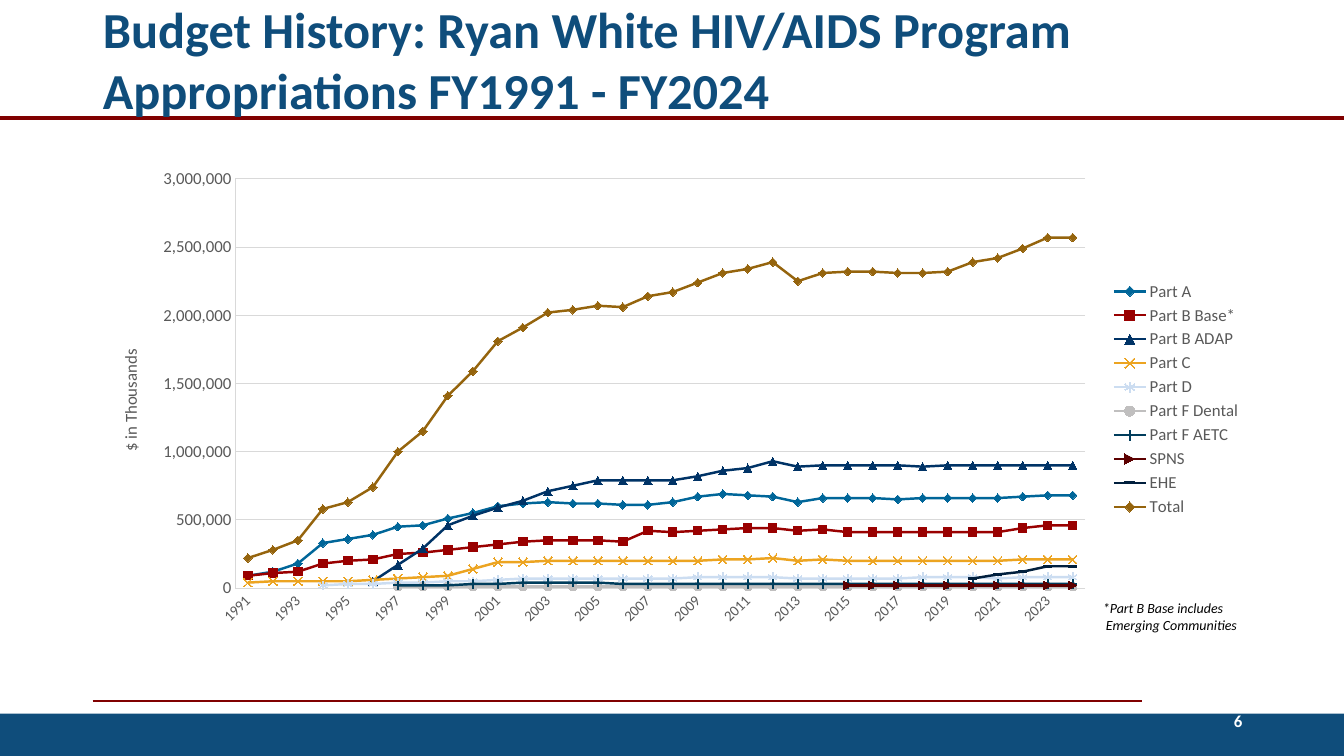
from lxml.etree import SubElement
from pptx import Presentation
from pptx.chart.data import CategoryChartData
from pptx.dml.color import RGBColor
from pptx.enum.chart import XL_CHART_TYPE, XL_LEGEND_POSITION, XL_MARKER_STYLE, XL_TICK_MARK
from pptx.enum.shapes import MSO_CONNECTOR, MSO_SHAPE
from pptx.enum.text import MSO_ANCHOR, MSO_AUTO_SIZE, PP_ALIGN
from pptx.oxml import parse_xml
from pptx.oxml.ns import nsdecls, qn
from pptx.util import Inches, Pt

# Content
TITLE = "Budget History: Ryan White HIV/AIDS Program Appropriations FY1991 - FY2024"
NOTE = ["*Part B Base includes", "Emerging Communities"]
AXIS_TITLE = "$ in Thousands"
PAGE_NUMBER = "6"
FONT = "Calibri"
COLORS = {
    "navy": "0F4D7B", "maroon": "800000", "white": "FFFFFF", "black": "000000",
    "gray": "595959", "grid": "D9D9D9",
    "Part A": "006699", "Part B Base*": "990000", "Part B ADAP": "003366",
    "Part C": "ECA421", "Part D": "CCDDF1", "Part F Dental": "C0BFBF",
    "Part F AETC": "003D5C", "SPNS": "5C0000", "EHE": "001F3D", "Total": "95640D",
}
YEARS = range(1991, 2025)
UNIT = 10_000_000  # appropriations below are in tens of millions of dollars
# Name, marker, filled marker, appropriations up to the last year
APPROPRIATIONS = [
    ("Part A", XL_MARKER_STYLE.DIAMOND, True,
     [9, 12, 18, 33, 36, 39, 45, 46, 51, 55, 60, 62, 63, 62, 62, 61, 61, 63,
      67, 69, 68, 67, 63, 66, 66, 66, 65, 66, 66, 66, 66, 67, 68, 68]),
    ("Part B Base*", XL_MARKER_STYLE.SQUARE, True,
     [9, 11, 12, 18, 20, 21, 25, 26, 28, 30, 32, 34, 35, 35, 35, 34, 42, 41,
      42, 43, 44, 44, 42, 43, 41, 41, 41, 41, 41, 41, 41, 44, 46, 46]),
    ("Part B ADAP", XL_MARKER_STYLE.TRIANGLE, True,
     [5, 17, 29, 46, 53, 59, 64, 71, 75, 79, 79, 79, 79, 82, 86, 88, 93, 89,
      90, 90, 90, 90, 89, 90, 90, 90, 90, 90, 90]),
    ("Part C", XL_MARKER_STYLE.X, False,
     [4, 5, 5, 5, 5, 6, 7, 8, 9, 14, 19, 19, 20, 20, 20, 20, 20, 20,
      20, 21, 21, 22, 20, 21, 20, 20, 20, 20, 20, 20, 20, 21, 21, 21]),
    ("Part D", XL_MARKER_STYLE.STAR, False,
     [2, 3, 3, 4, 4, 5, 5, 6, 7, 7, 7, 7, 7, 7, 7, 8, 8, 8, 8, 7,
      7, 7, 7, 7, 8, 8, 8, 7, 8, 8, 8]),
    ("Part F Dental", XL_MARKER_STYLE.CIRCLE, True, [1] * 28),
    ("Part F AETC", XL_MARKER_STYLE.PLUS, False,
     [2, 2, 2, 3, 3, 4, 4, 4, 4] + [3] * 19),
    ("SPNS", XL_MARKER_STYLE.DOT, True, [2] * 10),
    ("EHE", XL_MARKER_STYLE.DASH, True, [7, 10, 12, 16, 16]),
    ("Total", XL_MARKER_STYLE.DIAMOND, True,
     [22, 28, 35, 58, 63, 74, 100, 115, 141, 159, 181, 191, 202, 204, 207, 206,
      214, 217, 224, 231, 234, 239, 225, 231, 232, 232, 231, 231, 232, 239,
      242, 249, 257, 257]),
]


def rgb(name):
    return RGBColor.from_string(COLORS[name])


def box(*lengths):
    return [Inches(length) for length in lengths]


def style_font(font, size, color, bold=False, italic=False):
    font.name, font.size = FONT, Pt(size)
    font.bold, font.italic = bold, italic
    font.color.rgb = rgb(color)


def style_line(line, color, width):
    line.color.rgb = rgb(color)
    line.width = Pt(width)


def add_rule(slide, left, right, top, width):
    rule = slide.shapes.add_connector(MSO_CONNECTOR.STRAIGHT, *box(left, top, right, top))
    style_line(rule.line, "maroon", width)
    SubElement(rule._element.spPr, qn("a:effectLst"))


def manual_layout(**places):
    """Layout element that places a chart part by fractions of the chart."""
    inner = '<c:layoutTarget val="inner"/>' if "w" in places else ""
    modes = "".join(f'<c:{key}Mode val="edge"/>' for key in "xy")
    sizes = "".join(f'<c:{key} val="{value}"/>' for key, value in places.items())
    return parse_xml(f'<c:layout {nsdecls("c")}><c:manualLayout>{inner}{modes}{sizes}'
                     "</c:manualLayout></c:layout>")


def add_budget_chart(slide):
    data = CategoryChartData(number_format="#,##0")
    data.categories = [str(year) for year in YEARS]
    for name, _, _, amounts in APPROPRIATIONS:
        missing = [None] * (len(YEARS) - len(amounts))
        data.add_series(name, missing + [amount * UNIT for amount in amounts])
    chart = slide.shapes.add_chart(
        XL_CHART_TYPE.LINE_MARKERS, *box(0.92, 1.58, 11.5, 4.76), data).chart
    style_font(chart.font, 10, "black")
    chart.has_title = False
    chart.has_legend = True
    chart.legend.position = XL_LEGEND_POSITION.RIGHT
    chart.legend.include_in_layout = False
    style_font(chart.legend.font, 12, "gray")

    # Series
    plot = chart.plots[0]
    plot.vary_by_categories = False
    for series, (name, marker, filled, _) in zip(plot.series, APPROPRIATIONS):
        series.smooth = False
        style_line(series.format.line, name, 1.75)
        series.marker.style, series.marker.size = marker, 6
        style_line(series.marker.format.line, name, 0.75)
        fill = series.marker.format.fill
        if filled:
            fill.solid()
            fill.fore_color.rgb = rgb(name)
        else:
            fill.background()

    # Axes
    years, dollars = chart.category_axis, chart.value_axis
    for axis, size in ((years, 10.6), (dollars, 12)):
        axis.major_tick_mark = axis.minor_tick_mark = XL_TICK_MARK.NONE
        style_line(axis.format.line, "grid", 0.75)
        style_font(axis.tick_labels.font, size, "gray")
    years._element.find(qn("c:txPr")).find(qn("a:bodyPr")).set("rot", "-2700000")
    dollars.minimum_scale, dollars.maximum_scale = 0, 300 * UNIT
    dollars.major_unit = 50 * UNIT
    style_line(dollars.major_gridlines.format.line, "grid", 0.75)
    dollars.tick_labels.number_format = "#,##0,"
    dollars.tick_labels.number_format_is_linked = False
    axis_text = dollars.axis_title.text_frame
    axis_text.text = AXIS_TITLE
    style_font(axis_text.paragraphs[0].runs[0].font, 12, "gray")
    axis_text._txBody.find(qn("a:bodyPr")).set("rot", "-5400000")

    # Places of the plot and the axis title
    title = dollars._element.find(qn("c:title"))
    plot_area = chart._chartSpace.find(qn("c:chart")).find(qn("c:plotArea"))
    for part in (title, plot_area):
        for layout in part.findall(qn("c:layout")):
            part.remove(layout)
    title.find(qn("c:tx")).addnext(manual_layout(x=0.02, y=0.39))
    plot_area.insert(0, manual_layout(x=0.123, y=0.041, w=0.733, h=0.853))


def main():
    presentation = Presentation()
    presentation.slide_width, presentation.slide_height = box(13.33, 7.5)
    slide = presentation.slides.add_slide(presentation.slide_layouts[5])

    # Rules and footer band
    add_rule(slide, 0.92, 11.33, 6.95, 1.5)
    band = slide.shapes.add_shape(MSO_SHAPE.RECTANGLE, *box(0, 7.08, 13.33, 0.42))
    band.shadow.inherit = False
    band.fill.solid()
    band.fill.fore_color.rgb = rgb("navy")
    band.line.fill.background()
    add_rule(slide, 0, 13.33, 1.17, 3)

    # Page number
    number = slide.shapes.add_textbox(*box(9.42, 6.95, 3, 0.4)).text_frame
    number.word_wrap = True
    number.vertical_anchor = MSO_ANCHOR.MIDDLE
    number.text = PAGE_NUMBER
    paragraph = number.paragraphs[0]
    paragraph.alignment = PP_ALIGN.RIGHT
    paragraph.space_after = Pt(6)
    style_font(paragraph.runs[0].font, 12, "white", bold=True)

    add_budget_chart(slide)

    # Title, in front of the rule
    title = slide.shapes.title
    title.left, title.top, title.width, title.height = box(0.92, 0, 11.5, 1.17)
    slide.shapes._spTree.append(title._element)
    title.text_frame.text = TITLE
    title.text_frame.word_wrap = True
    title.text_frame.auto_size = MSO_AUTO_SIZE.NONE
    title.text_frame.vertical_anchor = MSO_ANCHOR.MIDDLE
    title.text_frame.paragraphs[0].alignment = PP_ALIGN.LEFT
    style_font(title.text_frame.paragraphs[0].runs[0].font, 36, "navy", bold=True)

    # Footnote, second line slightly indented
    note = slide.shapes.add_textbox(*box(10.84, 5.9, 1.58, 0.44)).text_frame
    note.word_wrap = False
    note.auto_size = MSO_AUTO_SIZE.SHAPE_TO_FIT_TEXT
    note.text = "\n".join(NOTE)
    for paragraph in note.paragraphs:
        style_font(paragraph.runs[0].font, 10, "black", italic=True)
    note.paragraphs[1]._p.get_or_add_pPr().set("marL", str(Inches(0.03)))

    presentation.save("out.pptx")


if __name__ == "__main__":
    main()
